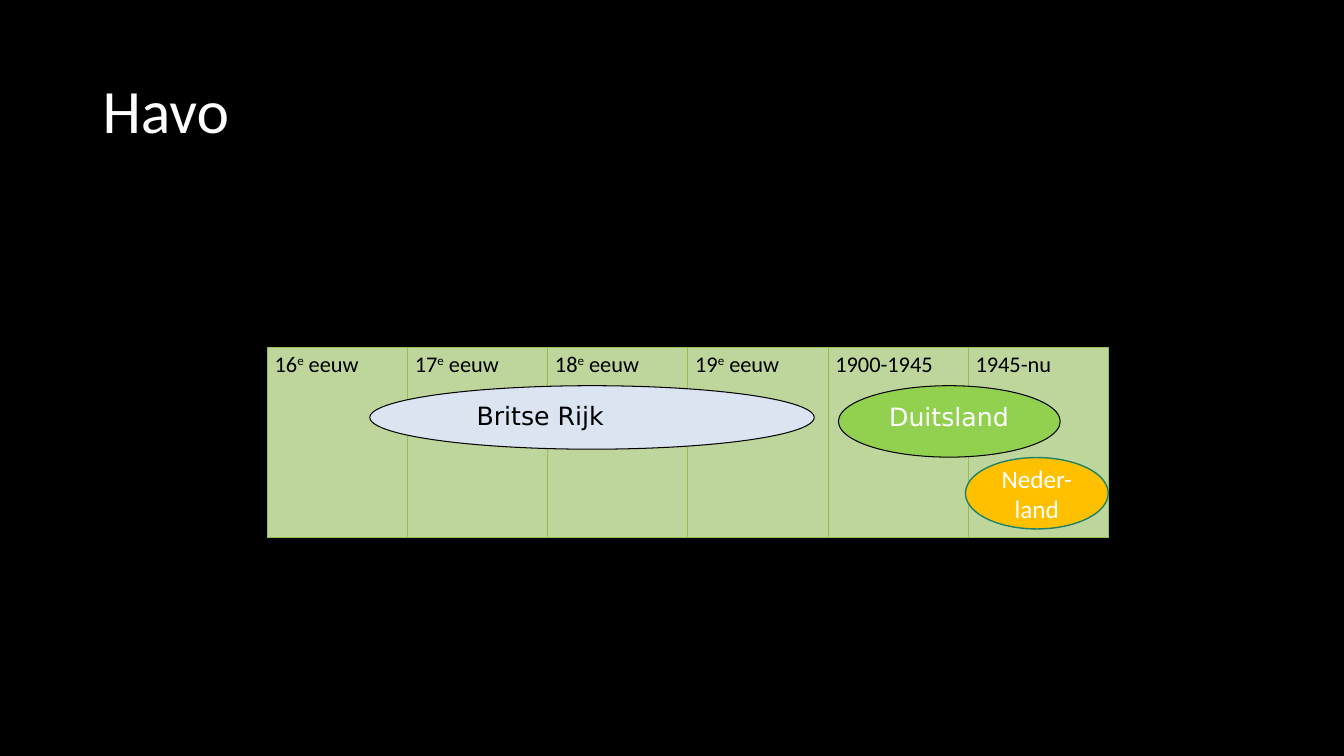
"""Builds a timeline slide with periods in a table and empires as ellipses."""
from dataclasses import dataclass
from typing import Any

from lxml import etree
from pptx import Presentation
from pptx import util as u
from pptx.dml import color
from pptx.enum import shapes, text
from pptx.oxml import ns

PERIODS = [("16", "e", " eeuw"), ("17", "e", " eeuw"), ("18", "e", " eeuw"),
           ("19", "e", " eeuw"), ("1900-1945",), ("1945-nu",)]
TABLE_BOX = (6.73, 8.74, 21.2, 4.8)
CELL_FILL, BORDER = "BED69B", "97BE49"


@dataclass(frozen=True)
class Ellipse:
    label: str
    box: tuple[float, float, float, float]
    fill: str
    line: str
    line_width: float
    font: str
    font_color: str
    margin_left: float = 0.25
    anchor: Any = text.MSO_ANCHOR.TOP
    alignment: Any = text.PP_ALIGN.LEFT


ELLIPSES = [
    Ellipse("Britse Rijk", (9.32, 9.72, 11.2, 1.6), "DBE5F1", "000000", 0.75,
            "DejaVu Sans", "000000", margin_left=1.05),
    Ellipse("Duitsland", (21.13, 9.72, 5.59, 1.8), "92D050", "000000", 0.75,
            "DejaVu Sans", "FFFFFF", margin_left=0.46),
    Ellipse("Neder-land", (24.33, 11.53, 3.6, 1.8), "FFC000", "1E8168", 1,
            "Calibri", "FFFFFF", anchor=text.MSO_ANCHOR.MIDDLE,
            alignment=text.PP_ALIGN.CENTER),
]


def set_attributes(target: Any, values: dict[str, Any]) -> None:
    for name, value in values.items():
        setattr(target, name, value)


def set_color(color_format: Any, hex_value: str) -> None:
    color_format.rgb = color.RGBColor.from_string(hex_value)


def set_fill(fill: Any, hex_value: str) -> None:
    fill.solid()
    set_color(fill.fore_color, hex_value)


def add_run(paragraph: Any, wording: str, size: float, font: str, hex_value: str) -> Any:
    run = paragraph.add_run()
    run.text = wording
    set_attributes(run.font, {"size": u.Pt(size), "name": font})
    set_color(run.font.color, hex_value)
    return run


def add_borders(cell: Any) -> None:
    properties = cell._tc.get_or_add_tcPr()
    for index, side in enumerate(("lnL", "lnR", "lnT", "lnB")):
        border = etree.Element(ns.qn(f"a:{side}"), w=str(u.Pt(0.5)))
        fill = etree.SubElement(border, ns.qn("a:solidFill"))
        etree.SubElement(fill, ns.qn("a:srgbClr"), val=BORDER)
        properties.insert(index, border)


def add_title(slide: Any, wording: str) -> None:
    title = slide.shapes.title
    set_attributes(title, {"left": u.Cm(2.33), "top": u.Cm(1.01),
                           "width": u.Cm(29.21), "height": u.Cm(3.68)})
    title.text_frame.vertical_anchor = text.MSO_ANCHOR.MIDDLE
    paragraph = title.text_frame.paragraphs[0]
    set_attributes(paragraph, {"alignment": text.PP_ALIGN.LEFT, "line_spacing": 0.9})
    add_run(paragraph, wording, 44, "Calibri", "FFFFFF")


def add_timeline(slide: Any) -> None:
    table = slide.shapes.add_table(1, len(PERIODS), *map(u.Cm, TABLE_BOX)).table
    set_attributes(table, {"first_row": False, "horz_banding": False})
    for cell, period in zip(table.iter_cells(), PERIODS):
        set_attributes(cell, {"margin_left": u.Cm(0.19), "margin_right": u.Cm(0.19),
                              "margin_top": 0, "margin_bottom": 0})
        set_fill(cell.fill, CELL_FILL)
        add_borders(cell)
        paragraph = cell.text_frame.paragraphs[0]
        paragraph.line_spacing = 1.15
        for wording in period:
            run = add_run(paragraph, wording, 16, "Calibri", "000000")
            if wording == "e":
                run.font._element.set("baseline", "30000")


def add_ellipse(slide: Any, ellipse: Ellipse) -> None:
    shape = slide.shapes.add_shape(shapes.MSO_SHAPE.OVAL, *map(u.Cm, ellipse.box))
    shape.shadow.inherit = False
    set_fill(shape.fill, ellipse.fill)
    set_color(shape.line.color, ellipse.line)
    shape.line.width = u.Pt(ellipse.line_width)
    set_attributes(shape.text_frame, {"word_wrap": True, "vertical_anchor": ellipse.anchor,
                                      "margin_left": u.Cm(ellipse.margin_left)})
    paragraph = shape.text_frame.paragraphs[0]
    paragraph.alignment = ellipse.alignment
    add_run(paragraph, ellipse.label, 18, ellipse.font, ellipse.font_color)


def main() -> None:
    presentation = Presentation()
    set_attributes(presentation, {"slide_width": u.Cm(33.87), "slide_height": u.Cm(19.05)})
    slide = presentation.slides.add_slide(presentation.slide_layouts[5])
    set_fill(slide.background.fill, "000000")
    add_timeline(slide)
    for ellipse in ELLIPSES:
        add_ellipse(slide, ellipse)
    add_title(slide, "Havo")
    presentation.save("out.pptx")


if __name__ == "__main__":
    main()
